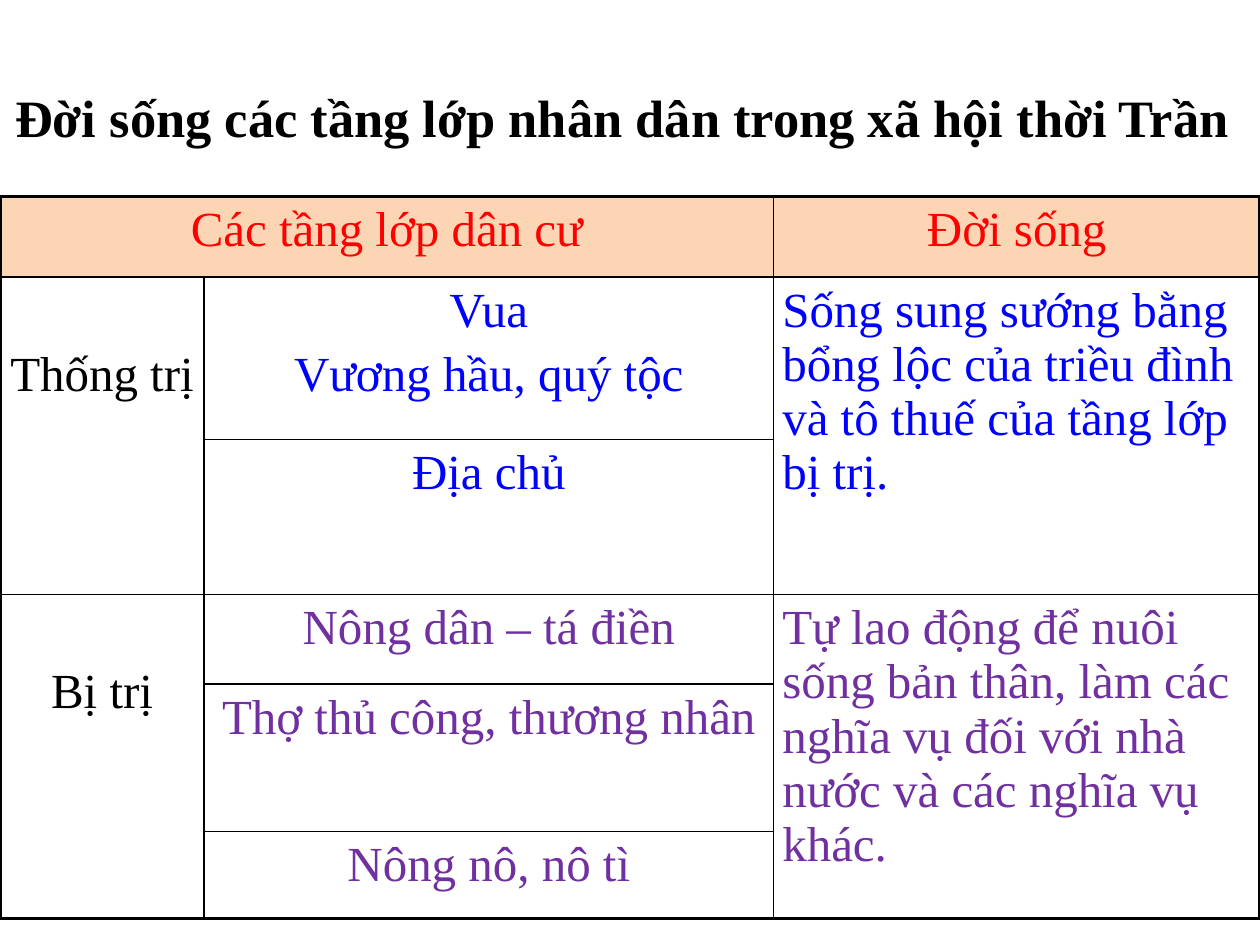
from lxml import etree
from pptx import Presentation
from pptx.dml.color import RGBColor
from pptx.enum.text import MSO_ANCHOR, PP_ALIGN
from pptx.oxml.ns import qn
from pptx.util import Inches, Pt

CENTER, LEFT = PP_ALIGN.CENTER, PP_ALIGN.LEFT
MIDDLE = MSO_ANCHOR.MIDDLE
BLACK, RED, BLUE, PURPLE = "000000", "FF0000", "0000FF", "7030A0"
PEACH, WHITE = "FCD5B5", "FFFFFF"
NO_STYLE = "{2D5ABB26-0587-4C30-8999-92F81FD0307C}"


def add_text(tf, text, size=28, color=BLACK, bold=False, align=CENTER):
    tf.word_wrap = True
    for i, line in enumerate(text.split("\n")):
        p = tf.paragraphs[0] if i == 0 else tf.add_paragraph()
        p.alignment = align
        if i:
            p.space_before = Pt(5.6)
        r = p.add_run()
        r.text = line
        r.font.name = "Times New Roman"
        r.font.size = Pt(size)
        r.font.bold = bold
        r.font.color.rgb = RGBColor.from_string(color)


def add_border(cell, side, width):
    ln = etree.SubElement(cell._tc.get_or_add_tcPr(), qn(f"a:ln{side}"), w=str(Pt(width)))
    fill = etree.SubElement(ln, qn("a:solidFill"))
    etree.SubElement(fill, qn("a:srgbClr"), val=BLACK)


prs = Presentation()
prs.slide_width, prs.slide_height = Inches(10), Inches(7.5)
s = prs.slides.add_slide(prs.slide_layouts[6])

col_widths = [1.62, 4.52, 3.86]
row_heights = [0.64, 1.29, 1.23, 0.71, 1.17, 0.69]
n_rows, n_cols = len(row_heights), len(col_widths)
frame = s.shapes.add_table(n_rows, n_cols, Inches(0), Inches(1.56),
                           Inches(sum(col_widths)), Inches(sum(row_heights)))
table = frame.table
table.first_row = table.horz_banding = False
table._tbl.tblPr.find(qn("a:tableStyleId")).text = NO_STYLE
for col, width in zip(table.columns, col_widths):
    col.width = Inches(width)
for row, height in zip(table.rows, row_heights):
    row.height = Inches(height)

cells = [
    (0, 0, 1, 2, "Các tầng lớp dân cư", RED),
    (0, 2, 1, 1, "Đời sống", RED),
    (1, 0, 2, 1, "Thống trị", BLACK),
    (1, 1, 1, 1, "Vua\nVương hầu, quý tộc", BLUE),
    (1, 2, 2, 1, "Sống sung sướng bằng bổng lộc của triều đình và tô thuế của tầng lớp bị trị.", BLUE),
    (2, 1, 1, 1, "Địa chủ", BLUE),
    (3, 0, 3, 1, "Bị trị", BLACK),
    (3, 1, 1, 1, "Nông dân – tá điền", PURPLE),
    (3, 2, 3, 1, "Tự lao động để nuôi sống bản thân, làm các nghĩa vụ đối với nhà nước và các nghĩa vụ khác.", PURPLE),
    (4, 1, 1, 1, "Thợ thủ công, thương nhân", PURPLE),
    (5, 1, 1, 1, "Nông nô, nô tì", PURPLE),
]
for row, col, height, width, text, color in cells:
    cell = table.cell(row, col)
    bottom, right = row + height, col + width
    if height * width > 1:
        cell.merge(table.cell(bottom - 1, right - 1))
    outer = {"L": col == 0, "R": right == n_cols, "T": row == 0, "B": bottom == n_rows}
    for side, on_edge in outer.items():
        add_border(cell, side, 2.25 if on_edge else 1)
    cell.fill.solid()
    cell.fill.fore_color.rgb = RGBColor.from_string(PEACH if row == 0 else WHITE)
    cell.margin_left = cell.margin_right = Inches(0.07)
    cell.margin_top = Inches(0.56 if color == BLACK else 0.05)
    cell.margin_bottom = Inches(0.05)
    add_text(cell.text_frame, text, color=color, align=LEFT if row and col == 2 else CENTER)

title = s.shapes.add_textbox(Inches(0), Inches(0.3), Inches(9.88), Inches(1.25))
title.text_frame.vertical_anchor = MIDDLE
add_text(title.text_frame, "Đời sống các tầng lớp nhân dân trong xã hội thời Trần", size=30, bold=True)

prs.save("out.pptx")
